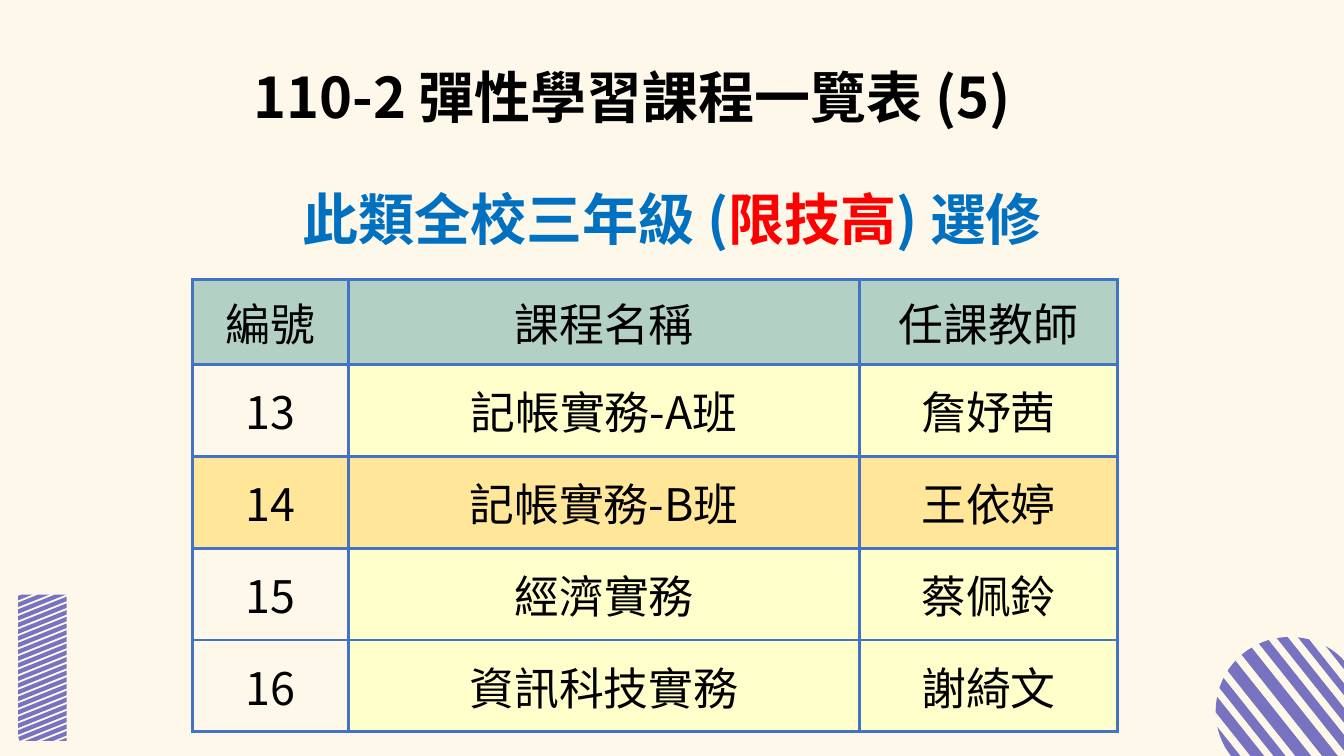
import math
from dataclasses import dataclass

from lxml import etree
from pptx import Presentation
from pptx.dml.color import RGBColor
from pptx.enum.text import MSO_ANCHOR, MSO_AUTO_SIZE, PP_ALIGN
from pptx.oxml.ns import qn
from pptx.util import Pt

CENTER = PP_ALIGN.CENTER
TOP = MSO_ANCHOR.TOP
MIDDLE = MSO_ANCHOR.MIDDLE
NO_AUTOFIT = MSO_AUTO_SIZE.NONE

CREAM = RGBColor(0xFE, 0xF8, 0xEA)
PURPLE = RGBColor(0x77, 0x73, 0xC0)
BLACK = RGBColor(0x00, 0x00, 0x00)
BLUE = RGBColor(0x00, 0x70, 0xC0)
RED = RGBColor(0xFF, 0x00, 0x00)
SAGE = RGBColor(0xB3, 0xD0, 0xC5)
LEMON = RGBColor(0xFF, 0xFF, 0xCC)
AMBER = RGBColor(0xFF, 0xE6, 0x99)
BORDER = RGBColor(0x44, 0x72, 0xC4)

FONT = "Noto Sans CJK SC"
Points = list[tuple[float, float]]


@dataclass(frozen=True)
class Span:
    text: str
    color: RGBColor


@dataclass(frozen=True)
class Heading:
    left: float
    top: float
    width: float
    height: float
    line_spacing: float
    spans: tuple[Span, ...]


@dataclass(frozen=True)
class CourseRow:
    texts: tuple[str, str, str]
    fills: tuple[RGBColor | None, RGBColor, RGBColor]
    height: float
    inset: float


TITLE = Heading(115.9, 43.2, 671, 65.5, 0.9, (Span("110-2 彈性學習課程一覽表 (5)", BLACK),))
SUBTITLE = Heading(62, 117.4, 836.6, 76.3, 1.15, (
    Span("此類全校三年級 (", BLUE),
    Span("限技高", RED),
    Span(") 選修", BLUE),
))

PLAIN = (None, LEMON, LEMON)
ROWS = (
    CourseRow(("編號", "課程名稱", "任課教師"), (SAGE,) * 3, 60.5, 7.2),
    CourseRow(("13", "記帳實務-A班", "詹妤茜"), PLAIN, 65.6, 0.7),
    CourseRow(("14", "記帳實務-B班", "王依婷"), (AMBER,) * 3, 65.6, 0.7),
    CourseRow(("15", "經濟實務", "蔡佩鈴"), PLAIN, 65.6, 0.7),
    CourseRow(("16", "資訊科技實務", "謝綺文"), PLAIN, 65.6, 0.7),
)
COLUMN_WIDTHS = (111.6, 365, 184.3)
TABLE_LEFT, TABLE_TOP = 137.4, 199.5

BAR_LEFT, BAR_RIGHT, BAR_TOP, BAR_BOTTOM = 13, 47.5, 424.8, 529.2
BAR_RISE, BAR_PITCH, BAR_STRIPE = 13.8, 4.8, 3.2
DISC_X, DISC_Y, DISC_RADIUS, DISC_ANGLE = 921.4, 508, 53, math.radians(51.5)
DISC_BANDS = (
    (-53, -47.6), (-42, -34.3), (-29.1, -22.3), (-16.9, -8), (-1.9, 6.9),
    (12.7, 19.7), (25.1, 31.7), (37.3, 42.6), (48.9, 53),
)


def write_spans(para, spans: tuple[Span, ...], size: float, bold: bool) -> None:
    para.alignment = CENTER
    for item in spans:
        span = para.add_run()
        span.text = item.text
        for name, value in {"name": FONT, "size": Pt(size), "bold": bold}.items():
            setattr(span.font, name, value)
        span.font.color.rgb = item.color
        etree.SubElement(span.font._element, qn("a:ea"), typeface=FONT)


def write_heading(box, heading: Heading) -> None:
    for name in ("left", "top", "width", "height"):
        setattr(box, name, Pt(getattr(heading, name)))
    frame = box.text_frame
    margins = {f"margin_{side}": Pt(7.2) for side in ("left", "top", "right", "bottom")}
    layout = {"word_wrap": True, "auto_size": NO_AUTOFIT, "vertical_anchor": TOP}
    for name, value in (margins | layout).items():
        setattr(frame, name, value)
    para = frame.paragraphs[0]
    para.line_spacing = heading.line_spacing
    write_spans(para, heading.spans, 40, True)


def add_borders(cell) -> None:
    properties = cell._tc.get_or_add_tcPr()
    for tag in ("a:lnL", "a:lnR", "a:lnT", "a:lnB"):
        line = etree.SubElement(properties, qn(tag), w=str(Pt(2.25)))
        fill = etree.SubElement(line, qn("a:solidFill"))
        etree.SubElement(fill, qn("a:srgbClr"), val=str(BORDER))


def add_course_table(page) -> None:
    table = page.shapes.add_table(
        len(ROWS), len(COLUMN_WIDTHS), Pt(TABLE_LEFT), Pt(TABLE_TOP),
        Pt(sum(COLUMN_WIDTHS)), Pt(sum(row.height for row in ROWS)),
    ).table
    table.first_row = False
    table.horz_banding = False
    for column, width in zip(table.columns, COLUMN_WIDTHS):
        column.width = Pt(width)
    for table_row, row in zip(table.rows, ROWS):
        table_row.height = Pt(row.height)
        for cell, text, fill in zip(table_row.cells, row.texts, row.fills):
            for side in ("left", "top", "right", "bottom"):
                setattr(cell, f"margin_{side}", Pt(row.inset))
            cell.vertical_anchor = MIDDLE
            add_borders(cell)
            if fill is None:
                cell.fill.background()
            else:
                cell.fill.solid()
                cell.fill.fore_color.rgb = fill
            write_spans(cell.text_frame.paragraphs[0], (Span(text, BLACK),), 32, False)


def bar_stripe(right_top: float) -> Points:
    def edge(start: float) -> Points:
        ends = []
        for share in (0, 1):
            y = start + BAR_RISE * share
            kept = min(max(y, BAR_TOP), BAR_BOTTOM)
            along = min(max((kept - start) / BAR_RISE, 0), 1)
            ends.append((BAR_RIGHT - along * (BAR_RIGHT - BAR_LEFT), kept))
        return ends

    return edge(right_top) + edge(right_top + BAR_STRIPE)[::-1]


def disc_stripe(low: float, high: float) -> Points:
    along_x, along_y = math.cos(DISC_ANGLE), math.sin(DISC_ANGLE)

    def arc(sign: int) -> Points:
        points = []
        for step in range(9):
            offset = low + (high - low) * step / 8
            half = sign * math.sqrt(DISC_RADIUS ** 2 - offset ** 2)
            points.append((DISC_X + along_y * offset + along_x * half,
                           DISC_Y - along_x * offset + along_y * half))
        return points

    return arc(1) + arc(-1)[::-1]


def add_stripes(page, stripes: list[Points]) -> None:
    outlines = [[(Pt(x), Pt(y)) for x, y in stripe] for stripe in stripes]
    builder = page.shapes.build_freeform(*outlines[0][0])
    for index, outline in enumerate(outlines):
        if index:
            builder.move_to(*outline[0])
        builder.add_line_segments(outline[1:], close=True)
    shape = builder.convert_to_shape()
    shape.shadow.inherit = False
    shape.fill.solid()
    shape.fill.fore_color.rgb = PURPLE
    shape.line.fill.background()


def main() -> None:
    deck = Presentation()
    deck.slide_width, deck.slide_height = Pt(960), Pt(540)
    page = deck.slides.add_slide(deck.slide_layouts[5])
    page.background.fill.solid()
    page.background.fill.fore_color.rgb = CREAM
    add_stripes(page, [disc_stripe(low, high) for low, high in DISC_BANDS])
    add_stripes(page, [bar_stripe(426.2 + BAR_PITCH * step) for step in range(-3, 22)])
    add_course_table(page)
    write_heading(page.shapes.add_textbox(0, 0, 0, 0), SUBTITLE)
    write_heading(page.shapes.title, TITLE)
    deck.save("out.pptx")


if __name__ == "__main__":
    main()
